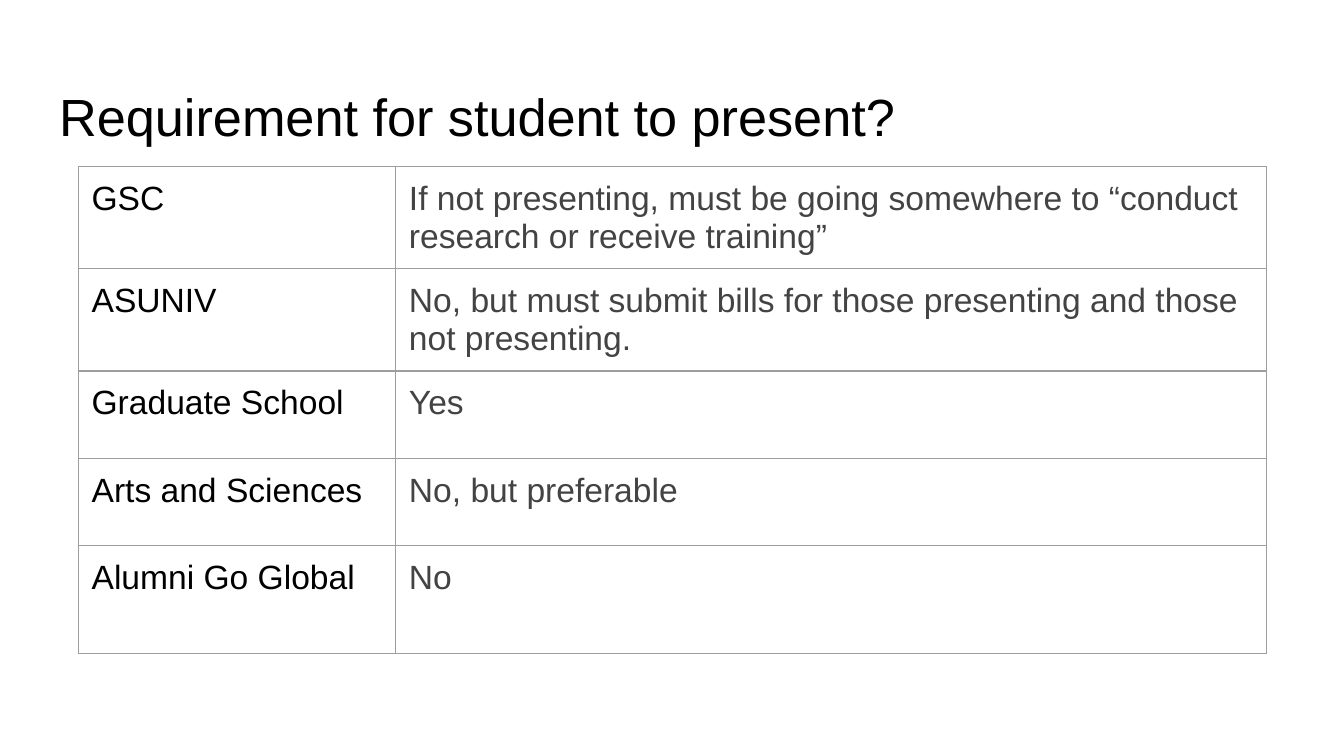
from lxml import etree
from pptx import Presentation
from pptx.dml.color import RGBColor
from pptx.enum.text import MSO_ANCHOR, MSO_AUTO_SIZE
from pptx.oxml.ns import qn
from pptx.util import Pt

TOP = MSO_ANCHOR.TOP
NO_FIT = MSO_AUTO_SIZE.NONE

# Content
TITLE = "Requirement for student to present?"
REQUIREMENTS = [
    ("GSC", "If not presenting, must be going somewhere to “conduct research or receive training”"),
    ("ASUNIV", "No, but must submit bills for those presenting and those not presenting."),
    ("Graduate School", "Yes"),
    ("Arts and Sciences", "No, but preferable"),
    ("Alumni Go Global", "No"),
]

# Theme and layout, lengths in points
THEME = {
    "font": "Arial", "title_size": 28, "cell_size": 18,
    "ink": "000000", "answer": "434343", "border": "9E9E9E", "paper": "FFFFFF",
}
INSET = 7.2
TITLE_BOX = (24.5, 35.3, 671, 45.4)
TABLE_LEFT, TABLE_TOP = 41.9, 89.3
COL_WIDTHS = [170, 466.6]
ROW_HEIGHTS = [46.8] * 4 + [57.6]
BORDER_WIDTH = 0.75


def write(tf, text, size, color):
    tf.text = text
    font = tf.paragraphs[0].runs[0].font
    for name, value in {"name": THEME["font"], "size": Pt(size), "bold": False}.items():
        setattr(font, name, value)
    font.color.rgb = RGBColor.from_string(color)


def set_margins(target, **changes):
    margins = {"left": INSET, "top": INSET, "right": INSET, "bottom": INSET, **changes}
    for side, value in margins.items():
        setattr(target, f"margin_{side}", Pt(value))


def add_borders(cell):
    tc_pr = cell._tc.get_or_add_tcPr()
    for i, side in enumerate(("lnL", "lnR", "lnT", "lnB")):
        ln = etree.Element(qn(f"a:{side}"), w=str(Pt(BORDER_WIDTH)))
        fill = etree.SubElement(ln, qn("a:solidFill"))
        etree.SubElement(fill, qn("a:srgbClr"), val=THEME["border"])
        tc_pr.insert(i, ln)


prs = Presentation()
prs.slide_width, prs.slide_height = Pt(720), Pt(405)
s = prs.slides.add_slide(prs.slide_layouts[5])
s.background.fill.solid()
s.background.fill.fore_color.rgb = RGBColor.from_string(THEME["paper"])

# Title
title = s.shapes.title
title.left, title.top, title.width, title.height = map(Pt, TITLE_BOX)
tf = title.text_frame
write(tf, TITLE, THEME["title_size"], THEME["ink"])
tf.paragraphs[0].alignment = 1
tf.word_wrap, tf.auto_size, tf.vertical_anchor = True, NO_FIT, TOP
set_margins(tf, top=9.6, bottom=0)

# Requirements table
table = s.shapes.add_table(
    len(REQUIREMENTS), len(COL_WIDTHS), Pt(TABLE_LEFT), Pt(TABLE_TOP),
    Pt(sum(COL_WIDTHS)), Pt(sum(ROW_HEIGHTS))).table
table.first_row = table.horz_banding = False
for column, width in zip(table.columns, COL_WIDTHS):
    column.width = Pt(width)
for row, height, texts in zip(table.rows, ROW_HEIGHTS, REQUIREMENTS):
    row.height = Pt(height)
    for cell, text, color in zip(row.cells, texts, (THEME["ink"], THEME["answer"])):
        write(cell.text_frame, text, THEME["cell_size"], color)
        set_margins(cell)
        cell.vertical_anchor = TOP
        cell.fill.background()
        add_borders(cell)

prs.save("out.pptx")
